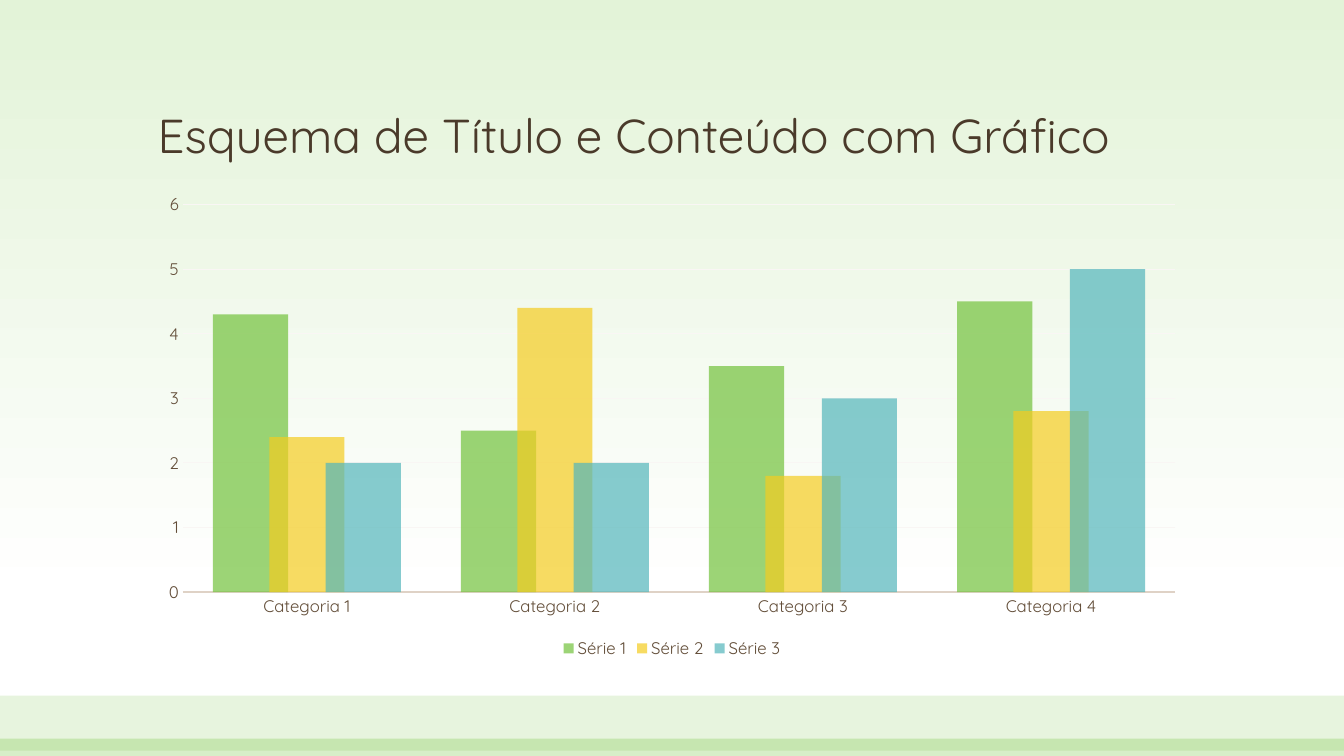
"""Build a slide with a title and a clustered column chart over green bands."""
from dataclasses import dataclass

from lxml import etree
from pptx import Presentation
from pptx.chart.data import CategoryChartData
from pptx.dml.color import RGBColor
from pptx.enum.chart import XL_CHART_TYPE, XL_LEGEND_POSITION, XL_TICK_MARK
from pptx.enum.shapes import MSO_SHAPE
from pptx.enum.text import MSO_ANCHOR, PP_ALIGN
from pptx.oxml.ns import qn
from pptx.util import Inches, Pt

COLUMN_CLUSTERED = XL_CHART_TYPE.COLUMN_CLUSTERED
LEGEND_BOTTOM = XL_LEGEND_POSITION.BOTTOM
NO_TICK = XL_TICK_MARK.NONE
RECTANGLE = MSO_SHAPE.RECTANGLE
ANCHOR_BOTTOM = MSO_ANCHOR.BOTTOM
ALIGN_LEFT = PP_ALIGN.LEFT

SLIDE_WIDTH = Inches(13.33)
SLIDE_HEIGHT = Inches(7.5)
FONT_NAME = "Quicksand"
TITLE_COLOR = "4A3A2A"
LABEL_COLOR = "624D38"
AXIS_COLOR = "DFD2C6"
GRID_COLOR = "F9F6F4"
GREEN = "72C23C"
BACKGROUND_STOPS = ((0, "E3F3D8"), (0.79, "FFFFFF"))
CATEGORIES = ("Categoria 1", "Categoria 2", "Categoria 3", "Categoria 4")


@dataclass(frozen=True)
class Area:
    left: float
    top: float
    width: float
    height: float

    def lengths(self) -> tuple[int, int, int, int]:
        return (
            Inches(self.left * 13.33),
            Inches(self.top * 7.5),
            Inches(self.width * 13.33),
            Inches(self.height * 7.5),
        )


@dataclass(frozen=True)
class Band:
    area: Area
    opacity: int


@dataclass(frozen=True)
class Series:
    name: str
    values: tuple[float, ...]
    color: str


TITLE_AREA = Area(0.11, 0.064, 0.78, 0.159)
CHART_AREA = Area(0.11, 0.244, 0.78, 0.633)
BANDS = (
    Band(Area(0, 0.92, 1, 0.073), 17),
    Band(Area(0, 0.977, 1, 0.023), 28),
)
SERIES = (
    Series("Série 1", (4.3, 2.5, 3.5, 4.5), GREEN),
    Series("Série 2", (2.4, 4.4, 1.8, 2.8), "F4CC20"),
    Series("Série 3", (2, 2, 3, 5), "53B6BB"),
)
SERIES_OPACITY = 70


def rgb(color: str) -> RGBColor:
    return RGBColor.from_string(color)


def style_font(font, size: float, color: str) -> None:
    font.name = FONT_NAME
    font.size = Pt(size)
    font.color.rgb = rgb(color)


def set_opacity(element, percent: int) -> None:
    for color in element.iter(qn("a:srgbClr")):
        etree.SubElement(color, qn("a:alpha")).set("val", str(percent * 1000))


def paint_background(slide) -> None:
    fill = slide.background.fill
    fill.gradient()
    fill.gradient_angle = 270
    for stop, (position, color) in zip(fill.gradient_stops, BACKGROUND_STOPS):
        stop.position = position
        stop.color.rgb = rgb(color)


def add_band(slide, band: Band) -> None:
    shape = slide.shapes.add_shape(RECTANGLE, *band.area.lengths())
    shape.shadow.inherit = False
    shape.fill.solid()
    shape.fill.fore_color.rgb = rgb(GREEN)
    set_opacity(shape.fill._xPr, band.opacity)
    shape.line.fill.background()


def add_title(slide, text: str) -> None:
    text_frame = slide.shapes.add_textbox(*TITLE_AREA.lengths()).text_frame
    text_frame.word_wrap = True
    text_frame.vertical_anchor = ANCHOR_BOTTOM
    text_frame.text = text
    paragraph = text_frame.paragraphs[0]
    paragraph.alignment = ALIGN_LEFT
    paragraph.line_spacing = 0.9
    style_font(paragraph.runs[0].font, 34, TITLE_COLOR)


def style_axes(chart) -> None:
    for axis in (chart.category_axis, chart.value_axis):
        axis.major_tick_mark = NO_TICK
        axis.minor_tick_mark = NO_TICK
        style_font(axis.tick_labels.font, 12, LABEL_COLOR)
    category_line = chart.category_axis.format.line
    category_line.color.rgb = rgb(AXIS_COLOR)
    category_line.width = Pt(1.25)
    value_axis = chart.value_axis
    value_axis.minimum_scale = 0
    value_axis.maximum_scale = 6
    value_axis.major_unit = 1
    value_axis.format.line.fill.background()
    value_axis.has_major_gridlines = True
    grid_line = value_axis.major_gridlines.format.line
    grid_line.color.rgb = rgb(GRID_COLOR)
    grid_line.width = Pt(0.75)


def add_column_chart(slide) -> None:
    chart_data = CategoryChartData()
    chart_data.categories = CATEGORIES
    for series in SERIES:
        chart_data.add_series(series.name, series.values)
    chart = slide.shapes.add_chart(
        COLUMN_CLUSTERED, *CHART_AREA.lengths(), chart_data
    ).chart
    style_font(chart.font, 10, LABEL_COLOR)
    chart.has_title = False
    chart.has_legend = True
    chart.legend.position = LEGEND_BOTTOM
    chart.legend.include_in_layout = False
    style_font(chart.legend.font, 12, LABEL_COLOR)
    style_axes(chart)
    plot = chart.plots[0]
    plot.vary_by_categories = False
    plot.gap_width = 80
    plot.overlap = 25
    for column, series in zip(plot.series, SERIES):
        column.format.fill.solid()
        column.format.fill.fore_color.rgb = rgb(series.color)
        set_opacity(column._element, SERIES_OPACITY)


def main() -> None:
    presentation = Presentation()
    presentation.slide_width = SLIDE_WIDTH
    presentation.slide_height = SLIDE_HEIGHT
    slide = presentation.slides.add_slide(presentation.slide_layouts[6])
    paint_background(slide)
    for band in BANDS:
        add_band(slide, band)
    add_title(slide, "Esquema de Título e Conteúdo com Gráfico")
    add_column_chart(slide)
    presentation.save("out.pptx")


if __name__ == "__main__":
    main()
